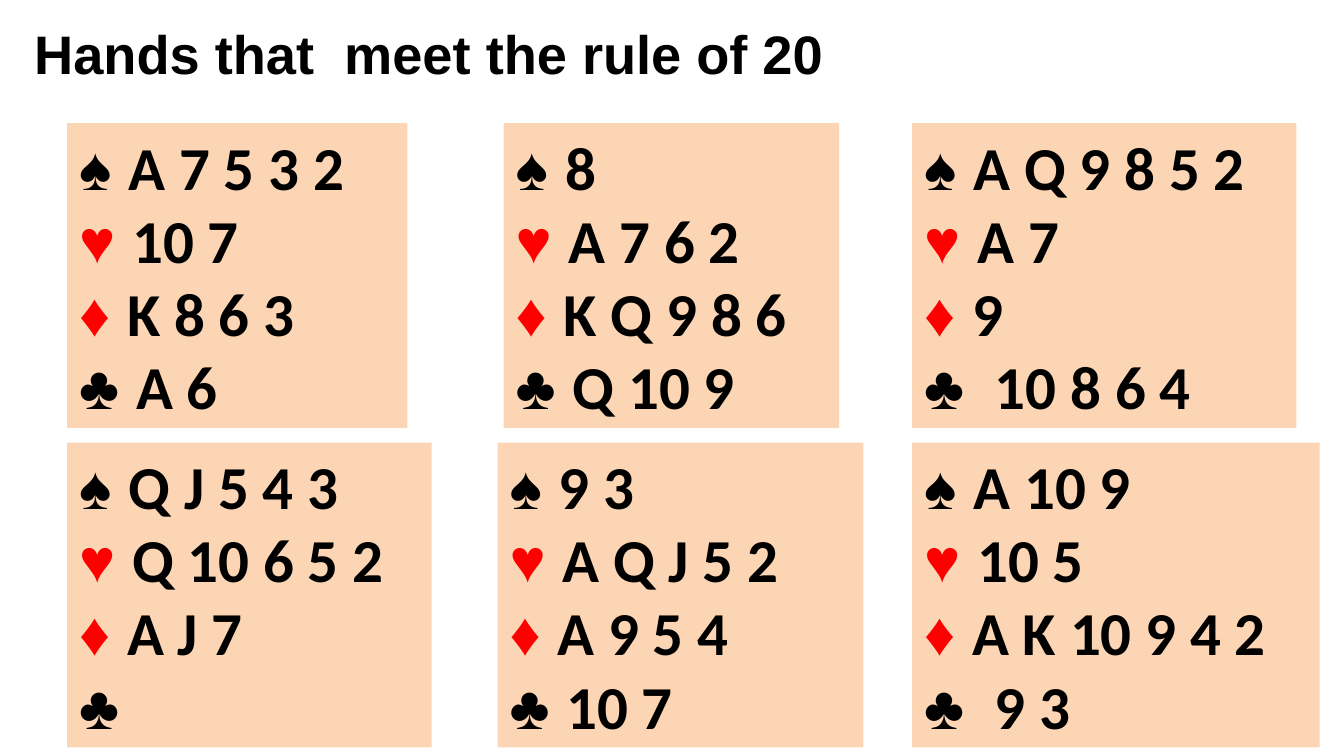
from dataclasses import dataclass

from pptx import Presentation
from pptx.dml.color import RGBColor
from pptx.enum import shapes, text
from pptx.util import Inches, Pt


@dataclass(frozen=True)
class Theme:
    black: RGBColor = RGBColor(0, 0, 0)
    red: RGBColor = RGBColor(0xFF, 0, 0)
    panel: RGBColor = RGBColor(0xFC, 0xD5, 0xB5)
    title_font: str = "Arial"
    suit_font: str = "Arial"
    card_font: str = "Calibri"
    title_size: Pt = Pt(32)
    hand_size: Pt = Pt(36)


THEME = Theme()
SUITS = (("♠ ", THEME.black), ("♥ ", THEME.red), ("♦ ", THEME.red), ("♣ ", THEME.black))
ROW_TOPS = (1.01, 3.63)
HAND_HEIGHT = 2.5

# Each row lists (left, width, cards by suit).
HAND_ROWS = (
    (
        (0.55, 2.79, ("A 7 5 3 2", "10 7", "K 8 6 3", "A 6")),
        (4.13, 2.75, ("8", "A 7 6 2", "K Q 9 8 6", "Q 10 9")),
        (7.48, 3.15, ("A Q 9 8 5 2", "A 7", "9", " 10 8 6 4")),
    ),
    (
        (0.55, 2.99, ("Q J 5 4 3", "Q 10 6 5 2", "A J 7", "")),
        (4.08, 3, ("9 3", "A Q J 5 2", "A 9 5 4", "10 7")),
        (7.48, 3.34, ("A 10 9", "10 5", "A K 10 9 4 2", " 9 3")),
    ),
)


def set_attributes(target, values):
    for name, value in values.items():
        setattr(target, name, value)


def format_frame(frame, anchor):
    set_attributes(frame, {
        "margin_left": Inches(0.1), "margin_right": Inches(0.1),
        "margin_top": Inches(0.05), "margin_bottom": Inches(0.05),
        "word_wrap": True, "vertical_anchor": anchor,
        "auto_size": text.MSO_AUTO_SIZE.NONE,
    })


def add_run(paragraph, content, name, size, color):
    run = paragraph.add_run()
    run.text = content
    set_attributes(run.font, {"name": name, "size": size, "bold": True})
    run.font.color.rgb = color


def add_title(slide, content, left, top, width, height):
    title = slide.shapes.title
    set_attributes(title, {
        "left": Inches(left), "top": Inches(top),
        "width": Inches(width), "height": Inches(height),
    })
    format_frame(title.text_frame, text.MSO_ANCHOR.TOP)
    paragraph = title.text_frame.paragraphs[0]
    paragraph.alignment = text.PP_ALIGN.LEFT
    add_run(paragraph, content, THEME.title_font, THEME.title_size, THEME.black)


def add_hand(slide, holdings, left, top, width, height):
    """Draw one bridge hand, a line for each suit."""
    panel = slide.shapes.add_shape(
        shapes.MSO_SHAPE.RECTANGLE,
        Inches(left), Inches(top), Inches(width), Inches(height))
    panel.shadow.inherit = False
    panel.fill.solid()
    panel.fill.fore_color.rgb = THEME.panel
    panel.line.fill.background()
    frame = panel.text_frame
    format_frame(frame, text.MSO_ANCHOR.TOP)
    for index, ((symbol, color), cards) in enumerate(zip(SUITS, holdings)):
        paragraph = frame.add_paragraph() if index else frame.paragraphs[0]
        paragraph.alignment = text.PP_ALIGN.LEFT
        suit = symbol if cards else symbol.strip()
        add_run(paragraph, suit, THEME.suit_font, THEME.hand_size, color)
        if cards:
            add_run(paragraph, cards, THEME.card_font, THEME.hand_size, THEME.black)


def main():
    presentation = Presentation()
    presentation.slide_width = Inches(11.02)
    presentation.slide_height = Inches(6.2)
    slide = presentation.slides.add_slide(presentation.slide_layouts[5])
    add_title(slide, "Hands that  meet the rule of 20", 0.18, 0.12, 8.67, 0.63)
    for top, hands in zip(ROW_TOPS, HAND_ROWS):
        for left, width, holdings in hands:
            add_hand(slide, holdings, left, top, width, HAND_HEIGHT)
    presentation.save("out.pptx")


if __name__ == "__main__":
    main()
